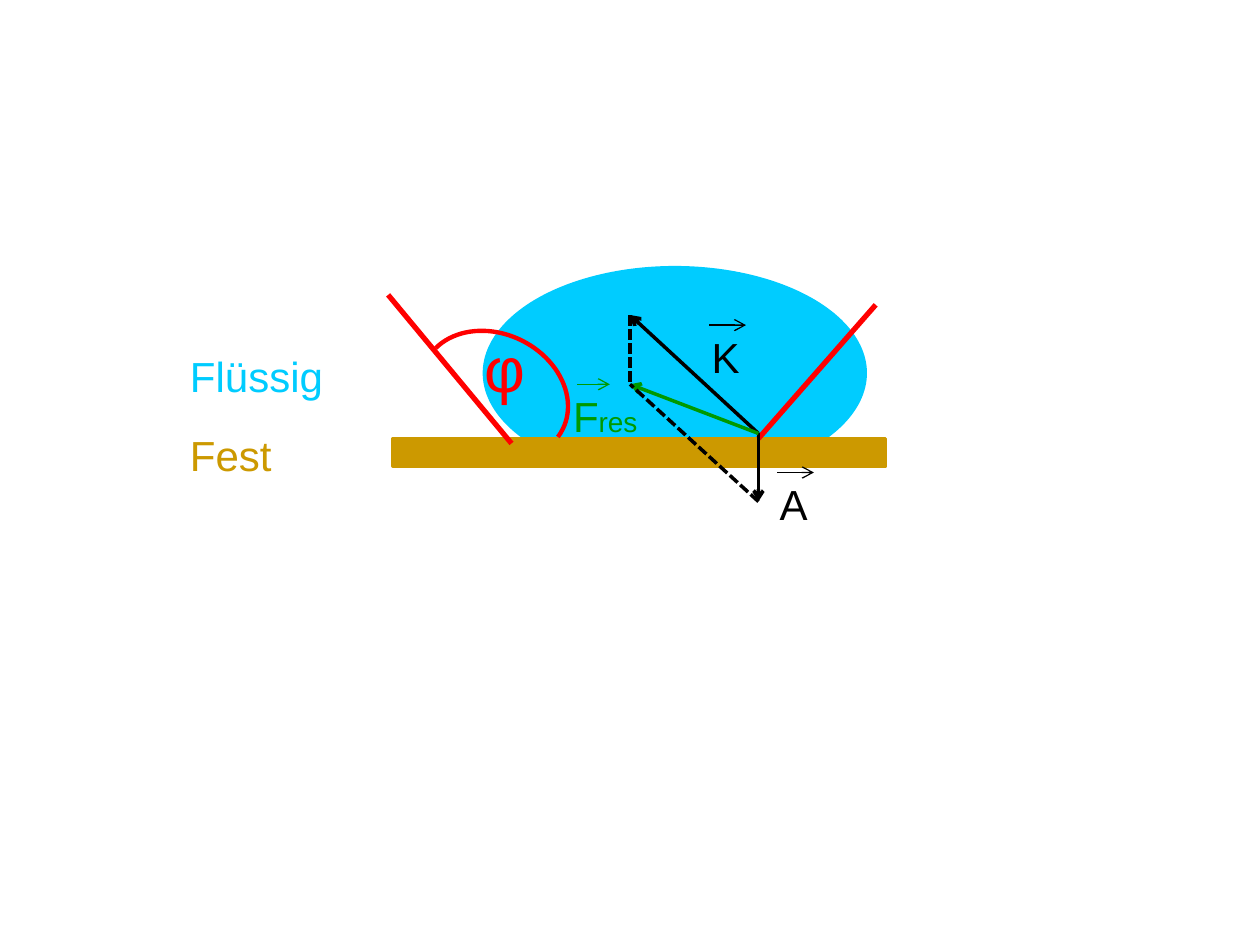
import pptx
import pptx.util
import pptx.dml.color
import pptx.enum.dml
import pptx.enum.shapes
import pptx.enum.text
import pptx.oxml.ns
import lxml.etree

Pt = pptx.util.Pt
RGB = pptx.dml.color.RGBColor.from_string
KIND = pptx.enum.shapes.MSO_SHAPE
HUES = {"water": "00CCFF", "solid": "CC9900", "angle": "FF0000",
        "force": "000000", "sum": "009900", "paper": "FFFFFF"}

deck = pptx.Presentation()
deck.slide_width, deck.slide_height = Pt(720), Pt(540)
slide = deck.slides.add_slide(deck.slide_layouts[6])


def draw(shapes, start, end, hue, width, arrow=False, dash=False):
    line = shapes.add_connector(pptx.enum.shapes.MSO_CONNECTOR.STRAIGHT,
                                *map(Pt, start + end))
    line.line.color.rgb = RGB(HUES[hue])
    line.line.width = Pt(width)
    if dash:
        line.line.dash_style = pptx.enum.dml.MSO_LINE.SQUARE_DOT
    name = pptx.oxml.ns.qn
    if arrow:
        lxml.etree.SubElement(line.line._get_or_add_ln(), name("a:tailEnd"), type="arrow")
    lxml.etree.SubElement(line._element.spPr, name("a:effectLst"))


def write(shapes, box, text, hue, size=24, wrap=True, sub=""):
    label = shapes.add_textbox(*map(Pt, box))
    frame = label.text_frame
    frame.word_wrap = wrap
    frame.auto_size = pptx.enum.text.MSO_AUTO_SIZE.SHAPE_TO_FIT_TEXT
    para = frame.paragraphs[0]
    para.font.name = "Arial"
    para.font.size = Pt(size)
    para.font.color.rgb = RGB(HUES[hue])
    para.add_run().text = text
    if sub:
        run = para.add_run()
        run.text = sub
        run.font.size = Pt(16)


# Drop, cut off flat by a white block, on the solid base
for kind, box, hue, edge in [
    (KIND.OVAL, (275.8, 152, 219.6, 122.4), "water", 0),
    (KIND.RECTANGLE, (238.3, 250.6, 235.4, 69.8), "paper", 2),
    (KIND.RECTANGLE, (224.6, 250.6, 281.5, 15.8), "solid", 2),
]:
    part = slide.shapes.add_shape(kind, *map(Pt, box))
    part.shadow.inherit = False
    part.fill.solid()
    part.fill.fore_color.rgb = RGB(HUES[hue])
    if edge:
        part.line.color.rgb = RGB(HUES[hue])
        part.line.width = Pt(edge)
    else:
        part.line.fill.background()

# Tangents and contact angle
draw(slide.shapes, (433.4, 250.6), (500.4, 174.2), "angle", 3)
group = slide.shapes.add_group_shape().shapes
arc = group.add_shape(KIND.ARC, Pt(247.7), Pt(182.2), Pt(69.8), Pt(87.1))
arc.adjustments[0], arc.adjustments[1] = 169.33, 58.24
arc.rotation = 296.4
arc.shadow.inherit = False
arc.fill.background()
arc.line.color.rgb = RGB(HUES["angle"])
arc.line.width = Pt(2.5)
draw(group, (292.3, 253.4), (221.8, 168.5), "angle", 3)
write(group, (270, 185, 38.2, 51.8), "φ", "angle", 36)

# Forces at the contact point
foot = (433.4, 247.7)
pull = (360, 180)
down = (433.4, 286.6)
total = (360, 219.6)
for tip, hue in [(pull, "force"), (down, "force"), (total, "sum")]:
    draw(slide.shapes, foot, tip, hue, 2, arrow=True)

# Vector names, each with a small arrow above
for box, text, sub, hue, left, top, width in [
    ((399.6, 185.8, 50.4, 33.8), "K", "", "force", 405.4, 185.8, 20.9),
    ((438.5, 270, 50.4, 36), "A", "", "force", 444.2, 270, 20.9),
    ((320.4, 219.6, 84.2, 36), "F", "res", "sum", 329.8, 219.6, 18.7),
]:
    group = slide.shapes.add_group_shape().shapes
    write(group, box, text, hue, sub=sub)
    draw(group, (left, top), (left + width, top), hue, 0.75, arrow=True)

# Phase names
write(slide.shapes, (101.5, 196.6, 91.4, 36), "Flüssig", "water", wrap=False)
write(slide.shapes, (101.5, 241.9, 61.9, 36), "Fest", "solid", wrap=False)

# Dashed sides of the force parallelogram
for start in (pull, down):
    draw(slide.shapes, start, total, "force", 2, dash=True)

deck.save("out.pptx")
